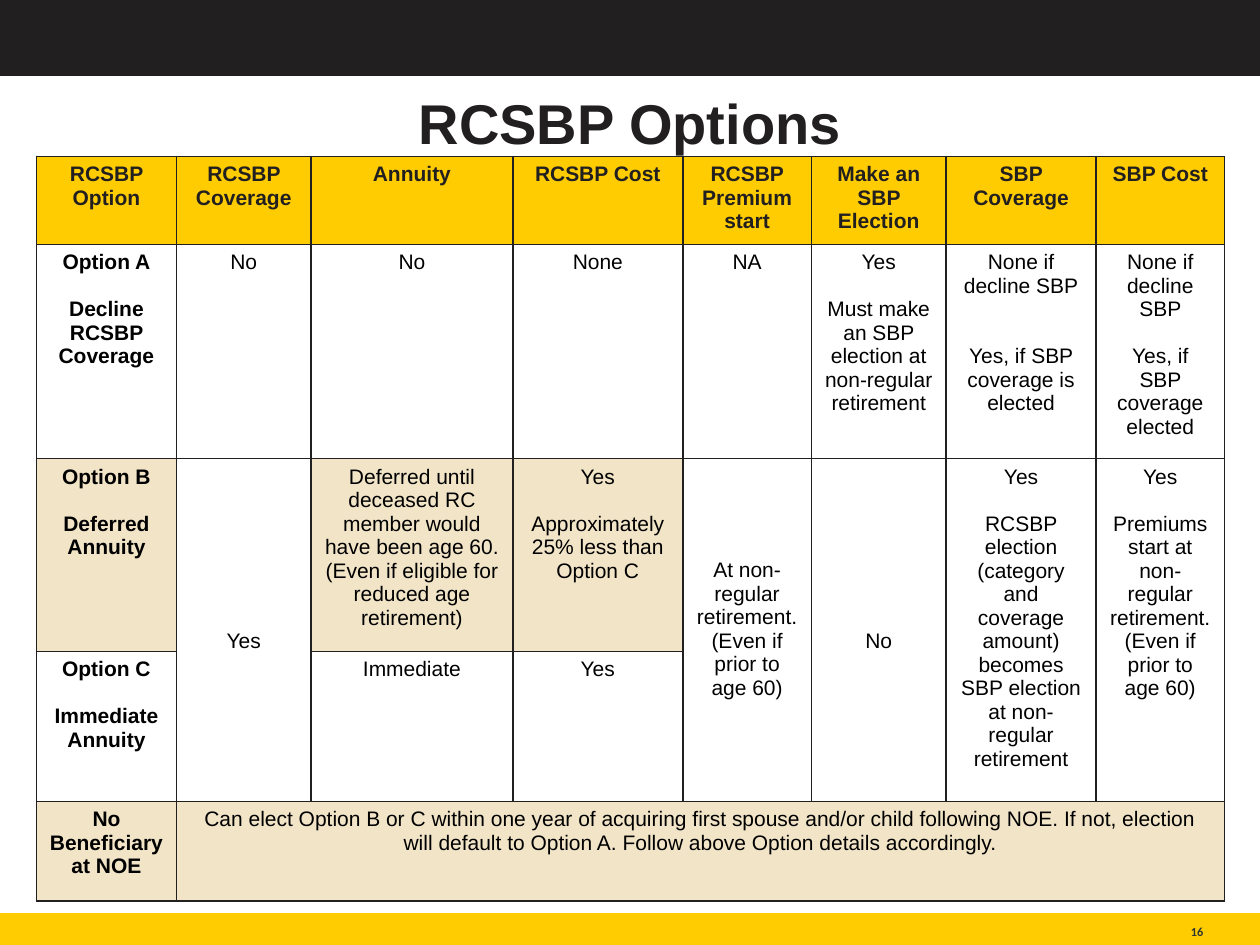
from lxml import etree
from pptx import Presentation
from pptx import util as u
from pptx.dml import color as c
from pptx.enum import shapes, text as t
from pptx.oxml import ns

Inches = u.Inches
COLORS = {"dark": "221F20", "gold": "FFCC01", "sand": "F1E4C7",
          "white": "FFFFFF", "black": "000000", "number": "2F372F"}
LINE = 13.4


def write(paragraph, text, size=12, font="Arial", color="black", bold=False,
          align=t.PP_ALIGN.CENTER, before=0):
    paragraph.alignment = align
    paragraph.space_before = u.Pt(before)
    run = paragraph.add_run()
    run.text = text
    run.font.size = u.Pt(size)
    run.font.name = font
    run.font.bold = bold
    run.font.color.rgb = c.RGBColor.from_string(COLORS[color])


def add_borders(cell):
    properties = cell._tc.get_or_add_tcPr()
    for index, side in enumerate(("lnL", "lnR", "lnT", "lnB")):
        line = etree.Element(ns.qn(f"a:{side}"), w=str(u.Pt(1)))
        fill = etree.SubElement(line, ns.qn("a:solidFill"))
        etree.SubElement(fill, ns.qn("a:srgbClr"), val=COLORS["dark"])
        properties.insert(index, line)


presentation = Presentation()
presentation.slide_width = Inches(10)
presentation.slide_height = Inches(7.5)
slide = presentation.slides.add_slide(presentation.slide_layouts[5])

for top, height, color in ((0.01, 0.59, "dark"), (7.25, 0.27, "gold")):
    band = slide.shapes.add_shape(shapes.MSO_SHAPE.RECTANGLE, 0, Inches(top),
                                  Inches(10), Inches(height))
    band.shadow.inherit = False
    band.fill.solid()
    band.fill.fore_color.rgb = c.RGBColor.from_string(COLORS[color])
    band.line.color.rgb = c.RGBColor.from_string(COLORS[color])
    band.line.width = u.Pt(1)

number = slide.shapes.add_textbox(Inches(8.68), Inches(7.25), Inches(0.87), Inches(0.2))
frame = number.text_frame
frame.margin_left = frame.margin_right = frame.margin_top = frame.margin_bottom = 0
frame.vertical_anchor = t.MSO_ANCHOR.BOTTOM
frame.word_wrap = True
write(frame.paragraphs[0], "16", size=7, font="Calibri", color="number", bold=True,
      align=t.PP_ALIGN.RIGHT)

title = slide.shapes.title
title.left, title.top = Inches(0.29), Inches(0.65)
title.width, title.height = Inches(9.42), Inches(0.5)
title.text_frame.auto_size = t.MSO_AUTO_SIZE.NONE
title.text_frame.vertical_anchor = t.MSO_ANCHOR.TOP
write(title.text_frame.paragraphs[0], "RCSBP Options", size=32, color="dark", bold=True)

column_widths = [1.11, 1.07, 1.6, 1.35, 1.02, 1.07, 1.19, 1.02]
row_heights = [0.7, 1.7, 1.53, 1.19, 0.79]
rows = [
    ["RCSBP Option", "RCSBP Coverage", "Annuity", "RCSBP Cost",
     "RCSBP Premium start", "Make an SBP Election", "SBP Coverage", "SBP Cost"],
    ["Option A|Decline RCSBP Coverage", "No", "No", "None", "NA",
     "Yes|Must make an SBP election at non-regular retirement",
     "None if decline SBP|Yes, if SBP coverage is elected",
     "None if decline SBP|Yes, if SBP coverage elected"],
    ["Option B|Deferred Annuity", "Yes",
     "Deferred until deceased RC member would have been age 60. "
     "(Even if eligible for reduced age retirement)",
     "Yes|Approximately 25% less than Option C",
     "At non-regular retirement. (Even if prior to age 60)", "No",
     "Yes|RCSBP election (category and coverage amount) becomes "
     "SBP election at non-regular retirement",
     "Yes|Premiums start at non-regular retirement. (Even if prior to age 60)"],
    ["Option C|Immediate Annuity", "", "Immediate", "Yes", "", "", "", ""],
    ["No Beneficiary|at NOE",
     "Can elect Option B or C within one year of acquiring first spouse and/or child "
     "following NOE. If not, election will default to Option A. "
     "Follow above Option details accordingly.", "", "", "", "", "", ""],
]
sand_cells = {(2, 0), (2, 2), (2, 3)} | {(4, column) for column in range(8)}
lines_above = {(2, 1): 7, (2, 4): 4, (2, 5): 7}
lines_between = {(1, 6): 2, (4, 0): 0}

table_shape = slide.shapes.add_table(len(row_heights), len(column_widths), Inches(0.29),
                                     Inches(1.24), Inches(9.42), Inches(5.91))
table = table_shape.table
table.first_row = table.horz_banding = False
for column, width in zip(table.columns, column_widths):
    column.width = Inches(width)
for row, height in zip(table.rows, row_heights):
    row.height = Inches(height)
for column in (1, 4, 5, 6, 7):
    table.cell(2, column).merge(table.cell(3, column))
table.cell(4, 1).merge(table.cell(4, 7))

for row, texts in enumerate(rows):
    for column, text in enumerate(texts):
        place = (row, column)
        cell = table.cell(row, column)
        fill = "gold" if row == 0 else "sand" if place in sand_cells else "white"
        cell.fill.solid()
        cell.fill.fore_color.rgb = c.RGBColor.from_string(COLORS[fill])
        add_borders(cell)
        cell.margin_left = cell.margin_right = Inches(0.1)
        cell.margin_bottom = Inches(0.05)
        cell.margin_top = Inches(0.05) + u.Pt(LINE * lines_above.get(place, 0))
        if not text:
            continue
        for index, part in enumerate(text.split("|")):
            frame = cell.text_frame
            paragraph = frame.add_paragraph() if index else frame.paragraphs[0]
            write(paragraph, part, color="black" if row else "dark",
                  bold=row == 0 or column == 0,
                  before=LINE * lines_between.get(place, 1) if index else 0)

presentation.save("out.pptx")
